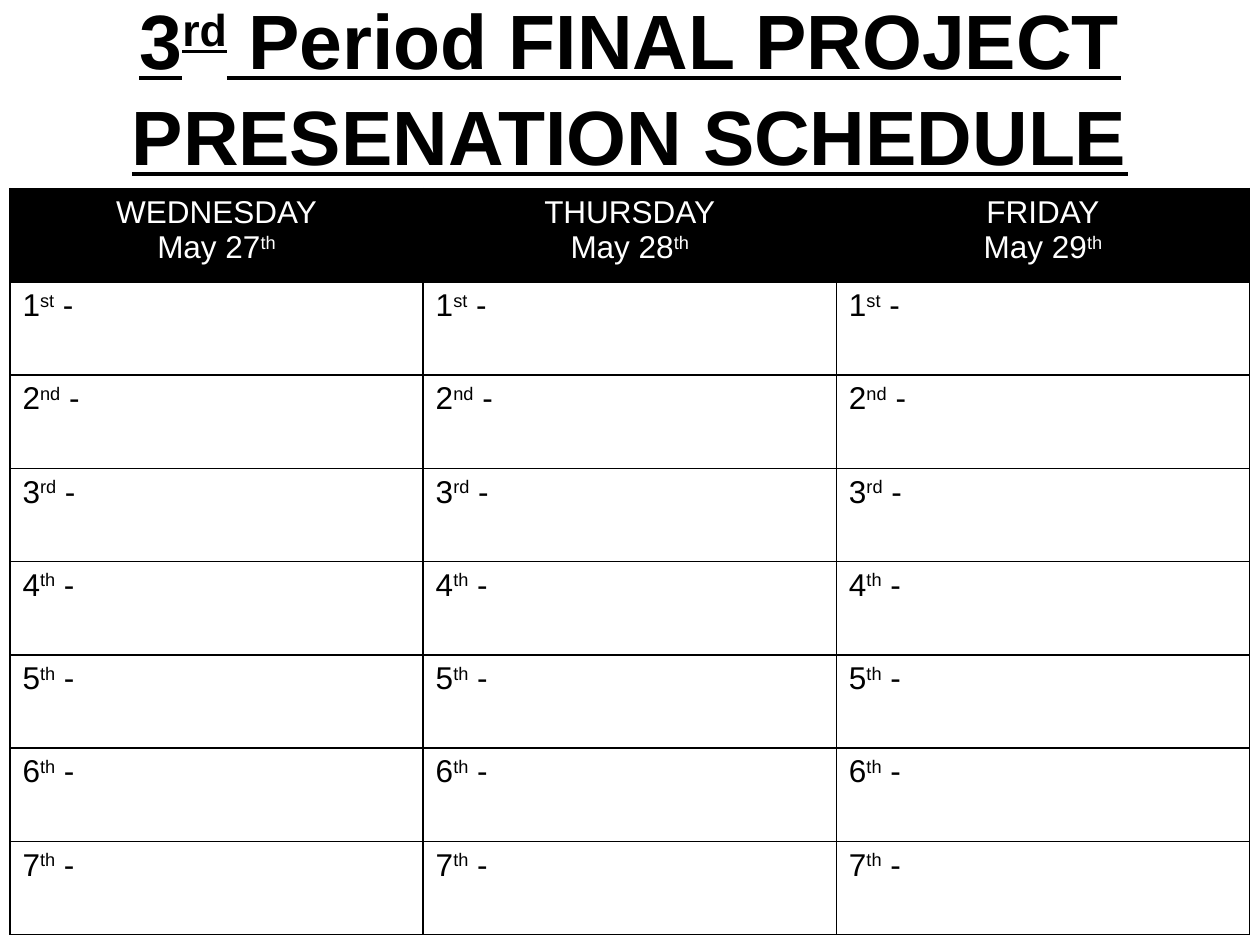
from dataclasses import dataclass

from lxml.etree import SubElement
from pptx import Presentation
from pptx.dml.color import RGBColor
from pptx.enum.text import MSO_ANCHOR, MSO_AUTO_SIZE, PP_ALIGN
from pptx.oxml.ns import qn
from pptx.util import Cm, Pt


@dataclass(frozen=True)
class Theme:
    """Hold the colours, font and sizes of the schedule."""
    ink: RGBColor = RGBColor(0, 0, 0)
    paper: RGBColor = RGBColor(255, 255, 255)
    font: str = "Arial"
    title_size: int = 44
    cell_size: int = 18
    border: int = 1


@dataclass(frozen=True)
class Box:
    """Describe a region in centimetres."""
    left: float
    top: float
    width: float
    height: float


THEME = Theme()
TITLE = ["3^rd^ Period FINAL PROJECT", "PRESENATION SCHEDULE"]
DAYS = [("WEDNESDAY", 27), ("THURSDAY", 28), ("FRIDAY", 29)]
TURNS = ["1^st^", "2^nd^", "3^rd^", "4^th^", "5^th^", "6^th^", "7^th^"]


def write_text(frame, lines, *, size, color, align=PP_ALIGN.LEFT, bold=False,
               underline=False, gap=0):
    """Write lines as paragraphs, raising the parts between carets."""
    for number, line in enumerate(lines):
        para = frame.add_paragraph() if number else frame.paragraphs[0]
        para.alignment = align
        para.space_before = Pt(gap if number else 0)
        for position, text in enumerate(line.split("^")):
            if not text:
                continue
            span = para.add_run()
            span.text = text
            span.font.name = THEME.font
            span.font.size = Pt(size)
            span.font.bold = bold
            span.font.underline = underline
            span.font.color.rgb = color
            if position % 2:
                span._r.get_or_add_rPr().set("baseline", "30000")


def draw_borders(cell):
    """Give a cell a solid line on all four sides."""
    properties = cell._tc.get_or_add_tcPr()
    for side in ("lnL", "lnR", "lnT", "lnB"):
        line = SubElement(properties, qn(f"a:{side}"), w=str(Pt(THEME.border)))
        fill = SubElement(line, qn("a:solidFill"))
        SubElement(fill, qn("a:srgbClr"), val=str(THEME.ink))


def place_title(page, box):
    """Place the underlined two-line heading in its box."""
    title = page.shapes.title
    title.left, title.top = Cm(box.left), Cm(box.top)
    title.width, title.height = Cm(box.width), Cm(box.height)
    frame = title.text_frame
    frame.word_wrap = True
    frame.auto_size = MSO_AUTO_SIZE.NONE
    frame.vertical_anchor = MSO_ANCHOR.MIDDLE
    frame.margin_top, frame.margin_bottom = Cm(0.23), Cm(0.03)
    write_text(frame, TITLE, size=THEME.title_size, color=THEME.ink,
               align=PP_ALIGN.CENTER, bold=True, underline=True, gap=2)


def place_schedule(page, box):
    """Place the table of days and presentation turns in its box."""
    row_count, column_count = len(TURNS) + 1, len(DAYS)
    table = page.shapes.add_table(
        row_count, column_count, Cm(box.left), Cm(box.top),
        Cm(box.width), Cm(box.height)).table
    table.first_row = table.horz_banding = False
    for row in table.rows:
        row.height = Cm(box.height / row_count)
    for column, (day, date) in enumerate(DAYS):
        table.columns[column].width = Cm(box.width / column_count)
        header = table.cell(0, column)
        draw_borders(header)
        header.fill.solid()
        header.fill.fore_color.rgb = THEME.ink
        write_text(header.text_frame, [day, f"May {date}^th^"],
                   size=THEME.cell_size, color=THEME.paper,
                   align=PP_ALIGN.CENTER)
        for row, turn in enumerate(TURNS, start=1):
            cell = table.cell(row, column)
            draw_borders(cell)
            cell.fill.background()
            write_text(cell.text_frame, [f"{turn} -"],
                       size=THEME.cell_size, color=THEME.ink)


def main():
    """Build and save the schedule slide."""
    deck = Presentation()
    deck.slide_width, deck.slide_height = Cm(25.4), Cm(19.05)
    page = deck.slides.add_slide(deck.slide_layouts[5])
    place_title(page, Box(0, 0.76, 25.4, 1.78))
    place_schedule(page, Box(0.2, 3.8, 24.99, 15.04))
    deck.save("out.pptx")


if __name__ == "__main__":
    main()
